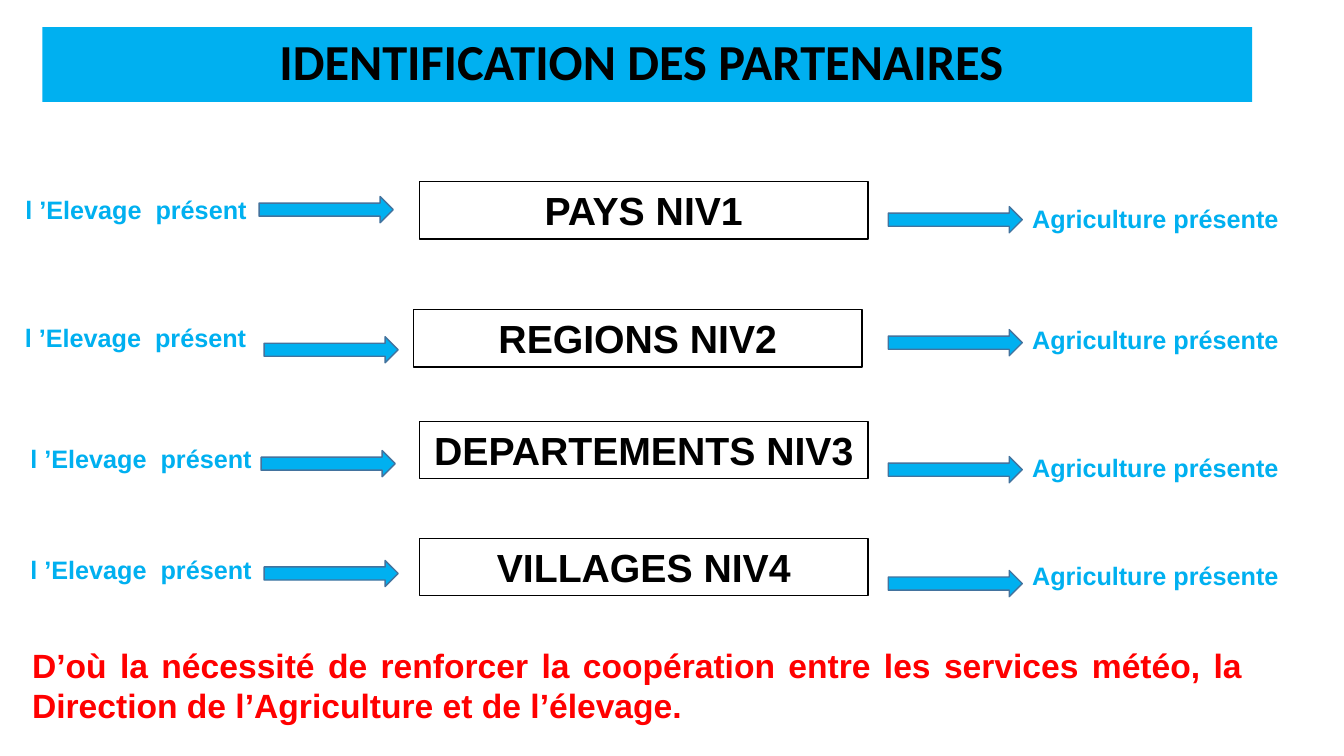
from dataclasses import dataclass

from pptx import Presentation
from pptx.dml.color import RGBColor
from pptx.enum import shapes, text
from pptx.util import Inches, Pt


@dataclass(frozen=True)
class Theme:
    blue: str = "00B0F0"
    edge: str = "43739E"
    black: str = "000000"
    white: str = "FFFFFF"
    red: str = "FF0000"
    title: int = 36
    level: int = 28
    note: int = 24
    label: int = 18


THEME = Theme()
ALIGN = text.PP_ALIGN
KIND = shapes.MSO_SHAPE

# level, its left and top, left label (left, top, width), left arrow, right label top, right arrow top
ROWS = [
    ("PAYS NIV1", 4.16, 1.8, (0, 1.88, 2.63), (2.57, 1.95), 1.97, 2.05),
    ("REGIONS NIV2", 4.1, 3.07, (0, 3.15, 2.62), (2.62, 3.34), 3.17, 3.27),
    ("DEPARTEMENTS NIV3", 4.16, 4.18, (0.11, 4.35, 2.51), (2.59, 4.47), 4.44, 4.53),
    ("VILLAGES NIV4", 4.16, 5.34, (0.11, 5.45, 2.51), (2.62, 5.56), 5.51, 5.66),
]


def write(shape, words, size, color, align=ALIGN.CENTER, face="Arial", space=1.0,
          anchor=text.MSO_ANCHOR.TOP):
    frame = shape.text_frame
    frame.word_wrap = True
    frame.vertical_anchor = anchor
    para = frame.paragraphs[0]
    para.alignment = align
    para.line_spacing = space
    run = para.add_run()
    run.text = words
    for name, value in {"size": Pt(size), "bold": True, "name": face}.items():
        setattr(run.font, name, value)
    run.font.color.rgb = RGBColor.from_string(color)


def block(slide, kind, spot, fill, line=None):
    """Add a filled preset shape, outlined only if a line colour is given."""
    shape = slide.shapes.add_shape(kind, *map(Inches, spot))
    shape.shadow.inherit = False
    shape.fill.solid()
    shape.fill.fore_color.rgb = RGBColor.from_string(fill)
    if line:
        shape.line.color.rgb = RGBColor.from_string(line)
        shape.line.width = Pt(1)
    else:
        shape.line.fill.background()
    return shape


def label(slide, words, spot, size, color, align=ALIGN.CENTER):
    box = slide.shapes.add_textbox(*map(Inches, spot))
    write(box, words, size, color, align)


def arrow(slide, left, top):
    block(slide, KIND.RIGHT_ARROW, (left, top, 1.33, 0.26), THEME.blue, THEME.edge)


def banner(slide, words):
    bar = block(slide, KIND.RECTANGLE, (0.42, 0.27, 12, 0.74), THEME.blue)
    write(bar, words, THEME.title, THEME.black, face="Calibri", space=0.9,
          anchor=text.MSO_ANCHOR.MIDDLE)


def level(slide, words, left, top):
    box = block(slide, KIND.RECTANGLE, (left, top, 4.45, 0.57), THEME.white, THEME.black)
    write(box, words, THEME.level, THEME.black)


def main():
    deck = Presentation()
    deck.slide_width, deck.slide_height = Inches(13.33), Inches(7.5)
    slide = deck.slides.add_slide(deck.slide_layouts[6])

    banner(slide, "IDENTIFICATION DES PARTENAIRES ")
    for name, left, top, (x, y, width), start, farm, end in ROWS:
        level(slide, name, left, top)
        label(slide, " l ’Elevage  présent", (x, y, width, 0.4), THEME.label, THEME.blue)
        arrow(slide, *start)
        label(slide, " Agriculture présente", (9.9, farm, 3.06, 0.4), THEME.label, THEME.blue)
        arrow(slide, 8.81, end)
    label(slide, "D’où la nécessité de renforcer la coopération entre les services météo, "
          "la Direction de l’Agriculture et de l’élevage.",
          (0.22, 6.35, 12.2, 0.91), THEME.note, THEME.red, ALIGN.JUSTIFY)

    deck.save("out.pptx")


if __name__ == "__main__":
    main()
